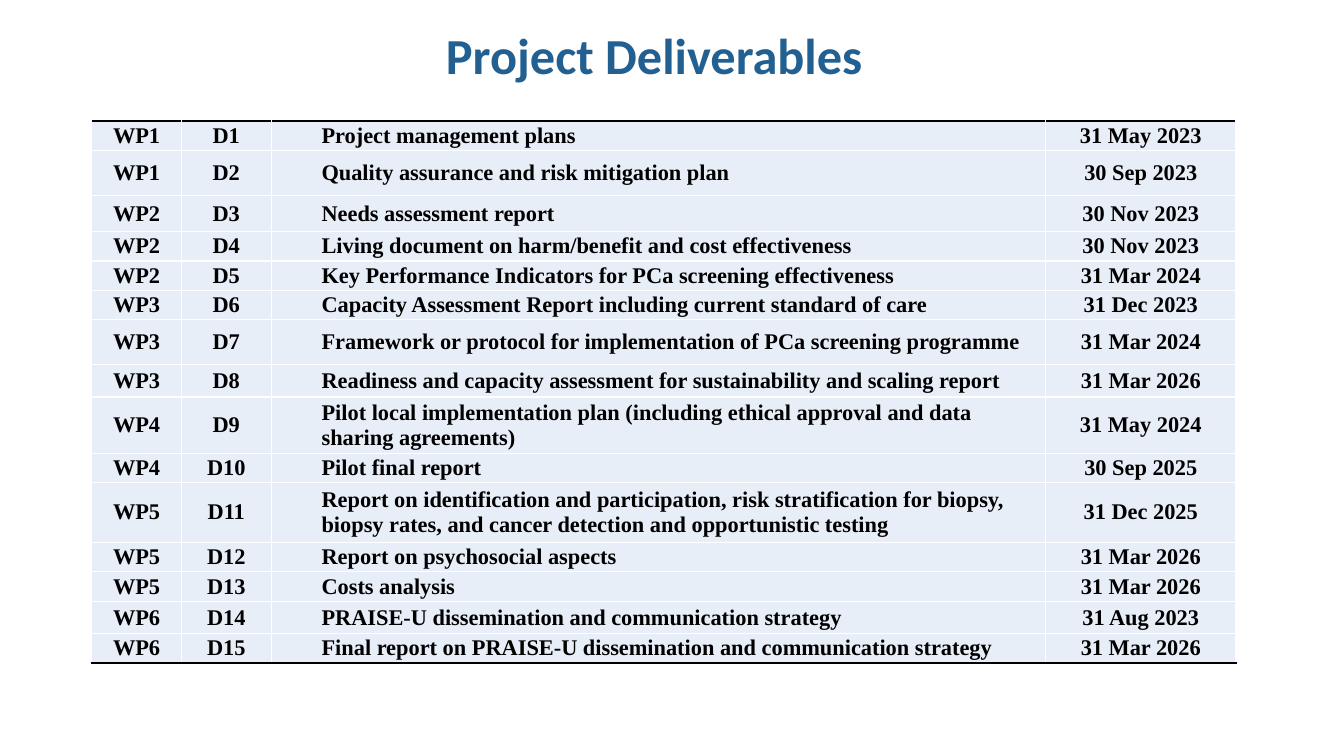
"""Build the project deliverables slide."""
from lxml import etree
from pptx import Presentation
from pptx.dml.color import RGBColor
from pptx.enum.text import MSO_ANCHOR, PP_ALIGN
from pptx.oxml.ns import qn
from pptx.util import Inches, Pt

MID, TOP = MSO_ANCHOR.MIDDLE, MSO_ANCHOR.TOP
LEFT, CENTER = PP_ALIGN.LEFT, PP_ALIGN.CENTER

TITLE = "Project Deliverables"
ROWS = [
    ("WP1", "Project management plans", "31 May 2023", 0.29),
    ("WP1", "Quality assurance and risk mitigation plan", "30 Sep 2023", 0.45),
    ("WP2", "Needs assessment report", "30 Nov 2023", 0.36),
    ("WP2", "Living document on harm/benefit and cost effectiveness", "30 Nov 2023", 0.29),
    ("WP2", "Key Performance Indicators for PCa screening effectiveness", "31 Mar 2024", 0.29),
    ("WP3", "Capacity Assessment Report including current standard of care", "31 Dec 2023", 0.29),
    ("WP3", "Framework or protocol for implementation of PCa screening programme", "31 Mar 2024", 0.45),
    ("WP3", "Readiness and capacity assessment for sustainability and scaling report", "31 Mar 2026", 0.32),
    ("WP4", "Pilot local implementation plan (including ethical approval and data "
            "sharing agreements)", "31 May 2024", 0.56),
    ("WP4", "Pilot final report", "30 Sep 2025", 0.29),
    ("WP5", "Report on identification and participation, risk stratification for biopsy, "
            "biopsy rates, and cancer detection and opportunistic testing", "31 Dec 2025", 0.59),
    ("WP5", "Report on psychosocial aspects", "31 Mar 2026", 0.29),
    ("WP5", "Costs analysis", "31 Mar 2026", 0.3),
    ("WP6", "PRAISE-U dissemination and communication strategy", "31 Aug 2023", 0.32),
    ("WP6", "Final report on PRAISE-U dissemination and communication strategy", "31 Mar 2026", 0.29),
]
COLS = (0.89, 0.89, 7.68, 1.89)
COLORS = {"title": "236092", "text": "000000", "cell": "E8EEF8",
          "rule": "000000", "grid": "FFFFFF"}


def write(frame, text, font="Times New Roman", size=16, color="text",
          align=CENTER, indent=0):
    para = frame.paragraphs[0]
    para.alignment = align
    if indent:
        props = para._p.get_or_add_pPr()
        props.set("marL", str(Inches(indent)))
        props.set("indent", "0")
    run = para.add_run()
    run.text = text
    run.font.name, run.font.size, run.font.bold = font, Pt(size), True
    run.font.color.rgb = RGBColor.from_string(COLORS[color])


def edge(cell, sides):
    props = cell._tc.get_or_add_tcPr()
    for spot, (side, color) in enumerate(sides.items()):
        line = etree.Element(qn("a:ln" + side), w=str(Pt(1)))
        fill = etree.SubElement(line, qn("a:solidFill"))
        etree.SubElement(fill, qn("a:srgbClr"), val=COLORS[color])
        props.insert(spot, line)


def main():
    deck = Presentation()
    deck.slide_width, deck.slide_height = Inches(13.33), Inches(7.5)
    slide = deck.slides.add_slide(deck.slide_layouts[6])

    box = slide.shapes.add_textbox(Inches(1.6), Inches(0.2), Inches(9.78), Inches(0.92))
    frame = box.text_frame
    frame.word_wrap, frame.vertical_anchor = True, TOP
    frame.margin_left = frame.margin_right = Inches(0.07)
    frame.margin_top = frame.margin_bottom = Inches(0.04)
    write(frame, TITLE, font="Calibri", size=36, color="title")

    high = sum(row[-1] for row in ROWS)
    table = slide.shapes.add_table(
        len(ROWS), len(COLS), Inches(0.91), Inches(1.2),
        Inches(sum(COLS)), Inches(high)).table
    table.first_row = table.horz_banding = False
    for col, wide in zip(table.columns, COLS):
        col.width = Inches(wide)

    last = len(ROWS) - 1
    for r, (pack, name, due, tall) in enumerate(ROWS):
        table.rows[r].height = Inches(tall)
        for c, text in enumerate((pack, f"D{r + 1}", name, due)):
            cell = table.cell(r, c)
            cell.vertical_anchor = MID
            cell.margin_left = cell.margin_right = 0
            cell.margin_top = cell.margin_bottom = 0
            cell.fill.solid()
            cell.fill.fore_color.rgb = RGBColor.from_string(COLORS["cell"])
            edge(cell, {"L": "grid", "R": "grid",
                        "T": "rule" if r == 0 else "grid",
                        "B": "rule" if r == last else "grid"})
            wide = c == 2
            write(cell.text_frame, text, align=LEFT if wide else CENTER,
                  indent=0.5 if wide else 0)

    deck.save("out.pptx")


if __name__ == "__main__":
    main()
